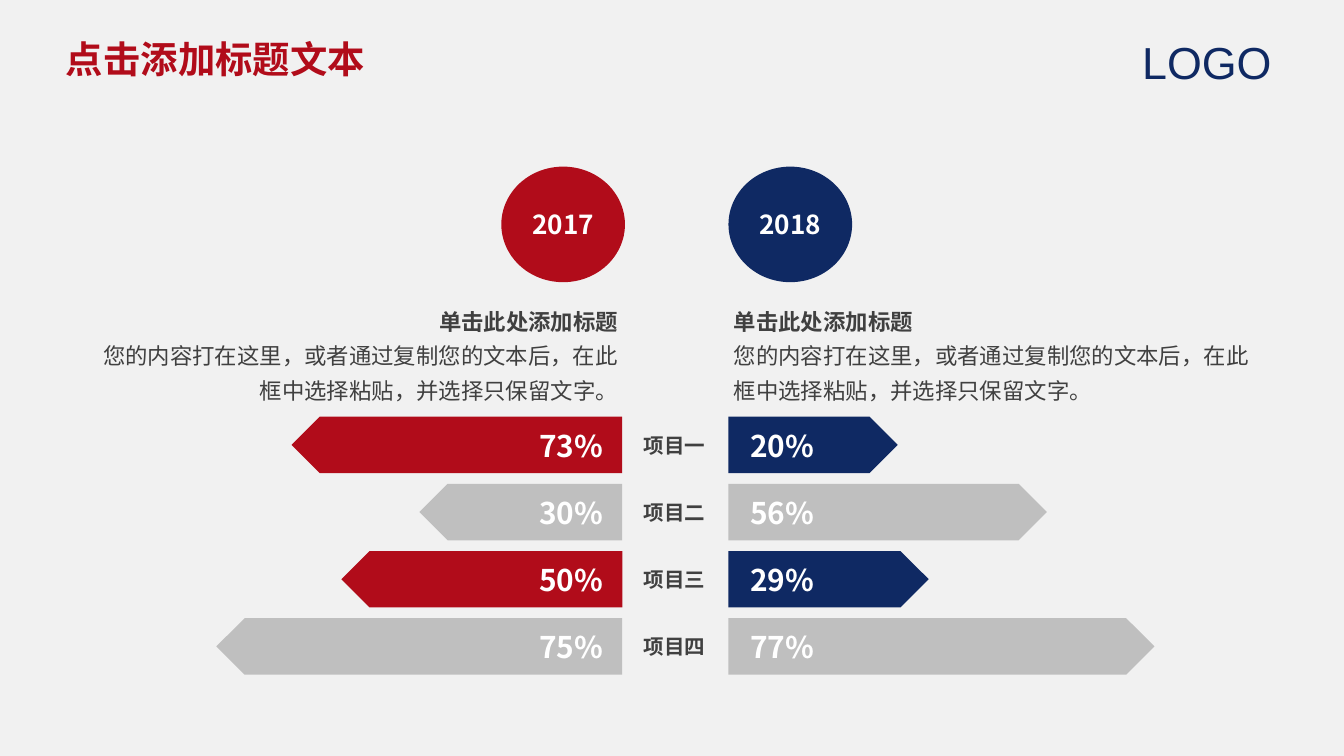
from lxml.etree import SubElement
from pptx import Presentation
from pptx.dml.color import RGBColor
from pptx.enum.shapes import MSO_SHAPE as Shape
from pptx.enum.text import MSO_ANCHOR as Anchor, PP_ALIGN as Align
from pptx.oxml.ns import qn
from pptx.util import Pt

PX = 9144  # 100 px to the inch
RED = RGBColor(0xB1, 0x0C, 0x1A)
NAVY = RGBColor(0x0F, 0x29, 0x63)
GRAY = RGBColor(0xBF, 0xBF, 0xBF)
DARK = RGBColor(0x40, 0x40, 0x40)
WHITE = RGBColor(0xFF, 0xFF, 0xFF)
PAPER = RGBColor(0xF1, 0xF1, 0xF1)
FONT = "Noto Sans CJK SC"

HEADING = "单击此处添加标题"
BODY = "您的内容打在这里，或者通过复制您的文本后，在此框中选择粘贴，并选择只保留文字。"
ITEMS = ["项目一", "项目二", "项目三", "项目四"]
ROW_PITCH, BAR_HEIGHT = 50, 42
BARS_TOP = 186  # below the top of a year's box


def emu(*lengths):
    return [length * PX for length in lengths]


def style_para(para, size, color, bold=True, align=Align.LEFT, font=FONT):
    para.alignment = align
    for span in para.runs:
        span.font.size, span.font.bold = Pt(size), bold
        span.font.color.rgb = color
        span.font.name = font
        SubElement(span.font._element, qn("a:ea")).set("typeface", font)


def set_frame(frame, wrap, inset_x, inset_y, anchor=Anchor.TOP):
    frame.word_wrap = wrap
    frame.vertical_anchor = anchor
    frame.margin_left = frame.margin_right = inset_x * PX
    frame.margin_top = frame.margin_bottom = inset_y * PX


def add_label(page, box, text, size, color, **style):
    label = page.shapes.add_textbox(*emu(*box))
    set_frame(label.text_frame, False, 7, 4)
    label.text_frame.text = text
    style_para(label.text_frame.paragraphs[0], size, color, **style)
    return label


def add_solid(page, kind, box, color):
    solid = page.shapes.add_shape(kind, *emu(*box))
    solid.shadow.inherit = False
    solid.fill.solid()
    solid.fill.fore_color.rgb = color
    solid.line.fill.background()
    return solid


def add_header(page):
    title = page.shapes.title
    title.left, title.top, title.width, title.height = emu(39, 22, 245, 44)
    set_frame(title.text_frame, False, 10, 5)
    title.text_frame.text = "点击添加标题文本"
    style_para(title.text_frame.paragraphs[0], 20, RED)

    logo = add_label(page, (840, 21, 125, 50), "LOGO", 24, NAVY, bold=False, font="Arial")
    set_frame(logo.text_frame, False, 10, 5)


def add_year(page, box, year, color, bars, mirrored=False):
    """One year's column; parts line up on the box's inner side."""
    left, top, width = box
    bar_gap = 1 if mirrored else 0

    def inner(part_width, gap=0):
        return left + width - gap - part_width if mirrored else left + gap

    # Year circle
    circle = add_solid(page, Shape.OVAL, (inner(92, -bar_gap), top, 92, 86), color)
    set_frame(circle.text_frame, True, 7, 4, Anchor.MIDDLE)
    circle.text_frame.text = year
    style_para(circle.text_frame.paragraphs[0], 14, WHITE, align=Align.CENTER)

    # Heading and description
    summary = page.shapes.add_textbox(*emu(left, top + 97, width, 83))
    frame = summary.text_frame
    set_frame(frame, True, 4, 2)
    frame.text = HEADING
    frame.add_paragraph().text = BODY
    for para, bold in zip(frame.paragraphs, (True, False)):
        style_para(para, 12, DARK, bold, Align.RIGHT if mirrored else Align.LEFT)
        para.line_spacing = 1.3

    # Bars with their values
    for row, (value, length) in enumerate(bars):
        bar_top = top + BARS_TOP + row * ROW_PITCH
        bar = add_solid(page, Shape.PENTAGON,
                        (inner(length, bar_gap), bar_top, length, BAR_HEIGHT),
                        GRAY if row % 2 else color)
        if mirrored:
            bar._element.spPr.xfrm.set("flipH", "1")
        add_label(page, (inner(64, 8 - bar_gap), bar_top + 4, 64, 35), value, 16, WHITE,
                  align=Align.CENTER)


def add_items(page, box):
    left, top, width = box
    for row, item in enumerate(ITEMS):
        add_label(page, (left, top + row * ROW_PITCH, width, 27), item, 11, DARK,
                  align=Align.CENTER)


def main():
    deck = Presentation()
    deck.slide_width = 1000 * PX
    deck.slide_height = deck.slide_width * 9 // 16
    page = deck.slides.add_slide(deck.slide_layouts[5])
    page.background.fill.solid()
    page.background.fill.fore_color.rgb = PAPER

    add_header(page)
    add_year(page, (67, 124, 397), "2017", RED,
             [("73%", 246), ("30%", 151), ("50%", 209), ("75%", 302)], mirrored=True)
    add_year(page, (542, 124, 406), "2018", NAVY,
             [("20%", 126), ("56%", 237), ("29%", 149), ("77%", 317)])
    add_items(page, (471, 318, 62))
    deck.save("out.pptx")


if __name__ == "__main__":
    main()
